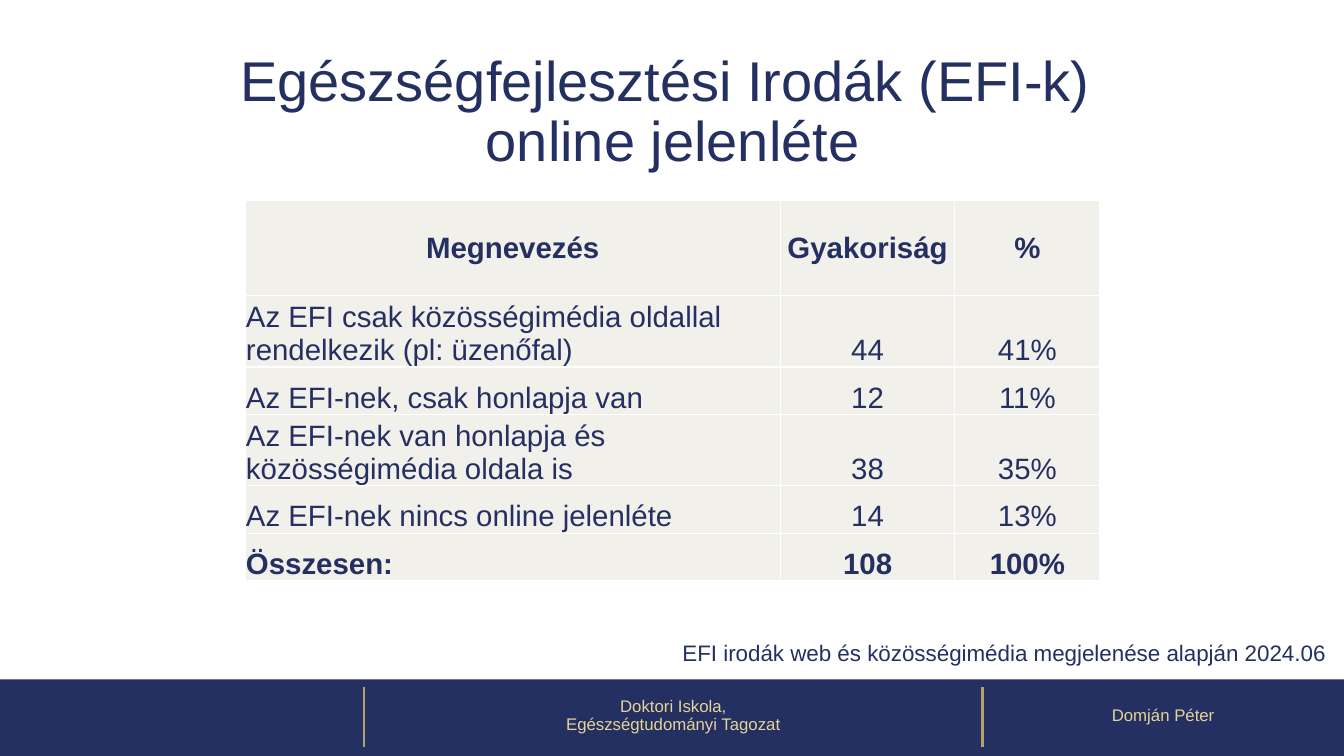
from pptx import Presentation
from pptx.dml.color import RGBColor
from pptx.enum.shapes import MSO_CONNECTOR, MSO_SHAPE
from pptx.enum.text import MSO_ANCHOR, PP_ALIGN
from pptx.oxml import parse_xml
from pptx.oxml.ns import nsdecls
from pptx.util import Inches, Pt

LEFT, CENTER = PP_ALIGN.LEFT, PP_ALIGN.CENTER
MIDDLE, BOTTOM = MSO_ANCHOR.MIDDLE, MSO_ANCHOR.BOTTOM
RECTANGLE, STRAIGHT = MSO_SHAPE.RECTANGLE, MSO_CONNECTOR.STRAIGHT

WIDTH, HEIGHT = 13.33, 7.5
COLORS = {
    "navy": "242F62",
    "gold line": "B3A16E",
    "gold text": "E3D496",
    "cell": "F2F0EB",
    "border": "FFFFFF",
}

COLUMN_WIDTHS = [5.31, 1.73, 1.44]
HEADER_HEIGHT, ROW_HEIGHT = 0.94, 0.47
ROWS = [
    ["Megnevezés", "Gyakoriság", "%"],
    ["Az EFI csak közösségimédia oldallal rendelkezik (pl: üzenőfal)", "44", "41%"],
    ["Az EFI-nek, csak honlapja van", "12", "11%"],
    ["Az EFI-nek van honlapja és közösségimédia oldala is", "38", "35%"],
    ["Az EFI-nek nincs online jelenléte", "14", "13%"],
    ["Összesen:", "108", "100%"],
]


def color(name):
    return RGBColor.from_string(COLORS[name])


def inches(*lengths):
    return [Inches(length) for length in lengths]


def write(text_frame, text, size, color_name="navy", align=LEFT, bold=False, spacing=None):
    text_frame.text = text
    paragraph = text_frame.paragraphs[0]
    paragraph.alignment = align
    paragraph.line_spacing = spacing
    font_format = {"name": "Arial", "size": Pt(size), "bold": bold}
    for run in paragraph.runs:
        for attribute, value in font_format.items():
            setattr(run.font, attribute, value)
        run.font.color.rgb = color(color_name)


def add_text(slide, box, text, size, wrap=True, anchor=None, **text_format):
    text_frame = slide.shapes.add_textbox(*inches(*box)).text_frame
    text_frame.word_wrap = wrap
    text_frame.vertical_anchor = anchor
    write(text_frame, text, size, **text_format)


def add_title(slide, box, text):
    title = slide.shapes.title
    title.left, title.top, title.width, title.height = inches(*box)
    title.text_frame.vertical_anchor = MIDDLE
    write(title.text_frame, text, 40, align=CENTER, spacing=0.9)


def add_footer(slide, box):
    left, top, width, height = box
    band = slide.shapes.add_shape(RECTANGLE, *inches(*box))
    band.shadow.inherit = False
    band.fill.solid()
    band.fill.fore_color.rgb = color("navy")
    band.line.fill.background()

    dividers = [left + 0.271 * width, left + 0.731 * width]
    for x in dividers:
        divider = slide.shapes.add_connector(
            STRAIGHT, *inches(x, top + 0.08, x, top + 0.67))
        divider.line.color.rgb = color("gold line")
        divider.line.width = Pt(1.5)
        divider.element.spPr.append(parse_xml(f"<a:effectLst {nsdecls('a')}/>"))

    labels = ["Doktori Iskola,\vEgészségtudományi Tagozat", "Domján Péter"]
    edges = dividers + [left + width]
    for text, start, end in zip(labels, edges, edges[1:]):
        add_text(slide, (start, top - 0.03, end - start, height), text, 12,
                 anchor=MIDDLE, color_name="gold text", align=CENTER, spacing=0.9)


def add_borders(cell):
    properties = cell._tc.get_or_add_tcPr()
    for side in ("lnL", "lnR", "lnT", "lnB"):
        properties.append(parse_xml(
            f'<a:{side} {nsdecls("a")} w="{Pt(1)}"><a:solidFill>'
            f'<a:srgbClr val="{COLORS["border"]}"/></a:solidFill></a:{side}>'))


def add_frequency_table(slide, left, top):
    height = HEADER_HEIGHT + ROW_HEIGHT * (len(ROWS) - 1)
    table = slide.shapes.add_table(
        len(ROWS), len(COLUMN_WIDTHS),
        *inches(left, top, sum(COLUMN_WIDTHS), height)).table
    table.first_row = table.horz_banding = False
    for column, width in zip(table.columns, COLUMN_WIDTHS):
        column.width = Inches(width)

    margin = Inches(0.01)
    for row_index, texts in enumerate(ROWS):
        is_header = row_index == 0
        is_total = row_index == len(ROWS) - 1
        table.rows[row_index].height = Inches(HEADER_HEIGHT if is_header else ROW_HEIGHT)
        cell_format = {
            "margin_left": margin, "margin_right": margin,
            "margin_top": margin, "margin_bottom": 0,
            "vertical_anchor": MIDDLE if is_header else BOTTOM,
        }
        for column_index, text in enumerate(texts):
            cell = table.cell(row_index, column_index)
            for attribute, value in cell_format.items():
                setattr(cell, attribute, value)
            add_borders(cell)
            cell.fill.solid()
            cell.fill.fore_color.rgb = color("cell")
            write(cell.text_frame, text, 21, bold=is_header or is_total,
                  align=CENTER if is_header or column_index else LEFT)


def main():
    presentation = Presentation()
    presentation.slide_width, presentation.slide_height = inches(WIDTH, HEIGHT)
    title_only = presentation.slide_layouts[5]
    slide = presentation.slides.add_slide(title_only)

    add_footer(slide, (0, 6.74, WIDTH, 0.79))
    add_title(slide, (0.92, 0.4, 11.5, 1.45),
              "Egészségfejlesztési Irodák (EFI-k) \vonline jelenléte")
    add_frequency_table(slide, 2.43, 1.99)
    add_text(slide, (6.67, 6.29, 6.59, 0.37),
             "EFI irodák web és közösségimédia megjelenése alapján 2024.06", 16, wrap=False)
    presentation.save("out.pptx")


if __name__ == "__main__":
    main()
